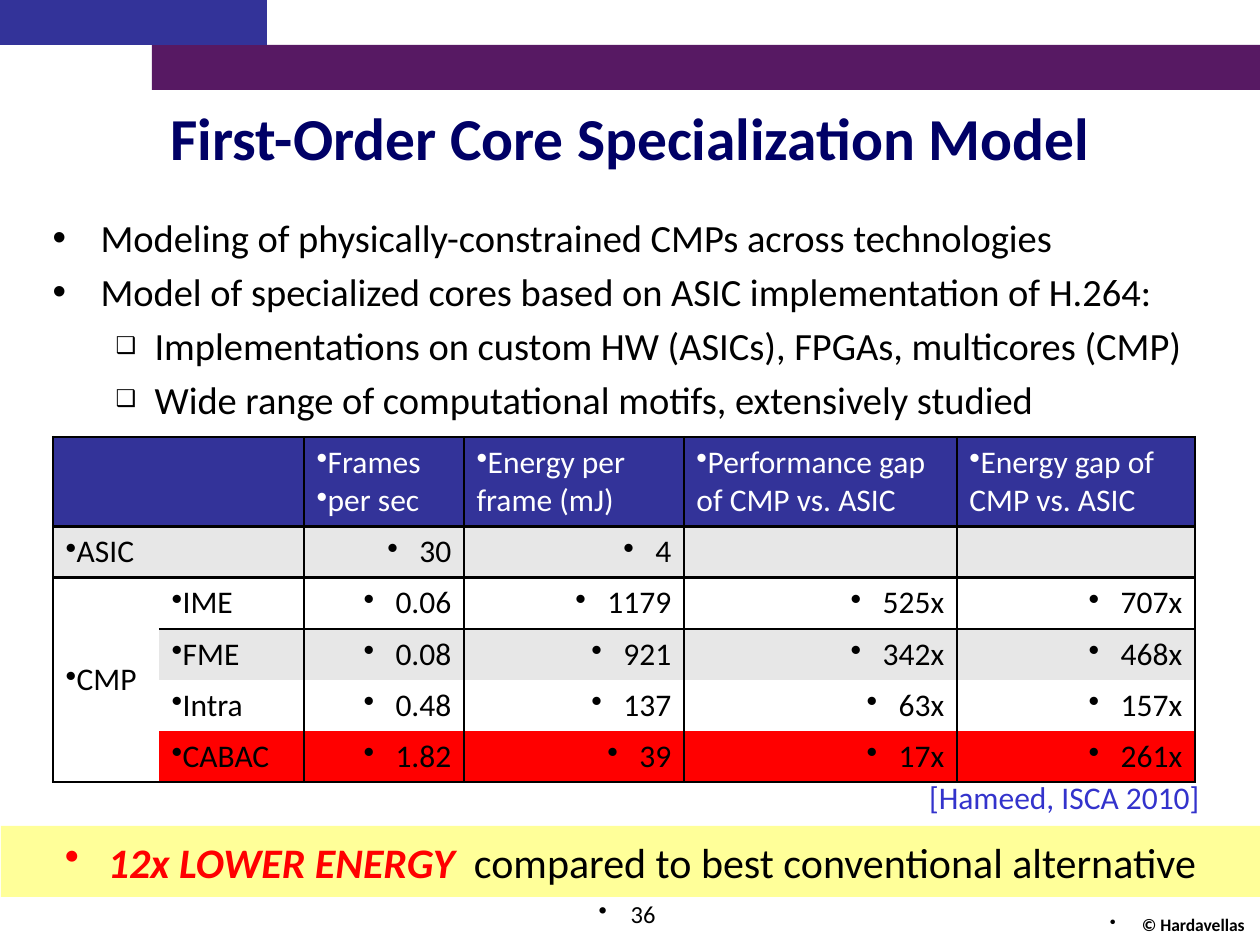
from pptx import Presentation
from pptx import util as u
from pptx.dml.color import RGBColor
from pptx.enum import shapes, text
from pptx.oxml.ns import qn
from lxml import etree

PX = 914400 / 126
FONT = "Calibri"
COLORS = {
    "blue": "333399", "purple": "571963", "navy": "000066", "link": "3333CC",
    "yellow": "FFFF99", "red": "FF0000", "gray": "E7E7E7", "white": "FFFFFF",
    "black": "000000",
}
ALIGN = {"l": text.PP_ALIGN.LEFT, "c": text.PP_ALIGN.CENTER, "r": text.PP_ALIGN.RIGHT}

BULLETS = [
    ("Modeling of physically-constrained CMPs across technologies", 0),
    ("Model of specialized cores based on ASIC implementation of H.264:", 0),
    ("Implementations on custom HW (ASICs), FPGAs, multicores (CMP)", 1),
    ("Wide range of computational motifs, extensively studied", 1),
]
COLS = [106, 145, 160, 220, 273, 238]
ROWS = [89, 51, 51, 51, 51, 51]
CELLS = [
    ["", "", "Frames\nper sec", "Energy per frame (mJ)",
     "Performance gap of CMP vs. ASIC", "Energy gap of CMP vs. ASIC"],
    ["ASIC", "", "30", "4", "", ""],
    ["CMP", "IME", "0.06", "1179", "525x", "707x"],
    ["", "FME", "0.08", "921", "342x", "468x"],
    ["", "Intra", "0.48", "137", "63x", "157x"],
    ["", "CABAC", "1.82", "39", "17x", "261x"],
]
ROW_FILLS = ["blue", "gray", "white", "gray", "white", "red"]


def px(n):
    """Turn px into EMU."""
    return u.Emu(round(n * PX))


def rgb(name):
    """Look up a colour by name."""
    return RGBColor.from_string(COLORS[name])


def place(sp, box):
    """Move a shape to a px box."""
    sp.left, sp.top, sp.width, sp.height = map(px, box)


def write(tf, *runs, size=18, color="black", bold=False, italic=False, align="l",
          level=0, before=0, bullet=None, bullet_size=100, hang=0, margin=None):
    """Add a paragraph of strings or (string, overrides) runs to a text frame."""
    first = not tf.text
    p = tf.paragraphs[0] if first else tf.add_paragraph()
    p.level = level
    p.alignment = ALIGN[align]
    p.space_before = u.Pt(0 if first else before)
    pPr = p._p.get_or_add_pPr()
    pPr.set("marL", str(px(hang if margin is None else margin)))
    pPr.set("indent", str(px(-hang)))
    if bullet:
        etree.SubElement(pPr, qn("a:buSzPct"), val=str(bullet_size * 1000))
        etree.SubElement(pPr, qn("a:buChar"), char=bullet)
    else:
        etree.SubElement(pPr, qn("a:buNone"))
    for run in runs:
        words, own = run if isinstance(run, tuple) else (run, {})
        r = p.add_run()
        r.text = words
        r.font.name = FONT
        r.font.size = u.Pt(size)
        r.font.bold = own.get("bold", bold)
        r.font.italic = own.get("italic", italic)
        r.font.color.rgb = rgb(own.get("color", color))


def add_rect(s, box, fill):
    """Draw a plain filled rectangle."""
    sp = s.shapes.add_shape(shapes.MSO_SHAPE.RECTANGLE, *map(px, box))
    sp.shadow.inherit = False
    sp.fill.solid()
    sp.fill.fore_color.rgb = rgb(fill)
    sp.line.fill.background()
    return sp


def add_label(s, box, words, wrap=True, **fmt):
    """Place one right-aligned line of text."""
    tf = s.shapes.add_textbox(*map(px, box)).text_frame
    tf.word_wrap = wrap
    write(tf, words, align="r", **fmt)


def add_header(s, box):
    """Draw the two staggered bars at the top."""
    x, y, w, h = box
    half = h // 2
    add_rect(s, (x + 152, y + half, w - 152, half), "purple")
    add_rect(s, (x, y, 267, half), "blue")


def add_title(s, box):
    """Fill the title placeholder."""
    place(s.shapes.title, box)
    tf = s.shapes.title.text_frame
    tf.vertical_anchor = text.MSO_ANCHOR.MIDDLE
    write(tf, "First-Order Core Specialization Model", size=34, color="navy",
          bold=True, align="c")


def add_body(s, box):
    """Fill the body placeholder with the two-level list."""
    sp = s.placeholders[1]
    place(sp, box)
    tf = sp.text_frame
    tf.auto_size = text.MSO_AUTO_SIZE.NONE
    levels = [dict(bullet="•", hang=48),
              dict(bullet="❑", bullet_size=60, hang=39, margin=102)]
    for words, level in BULLETS:
        write(tf, words, size=22, level=level, before=4.4, **levels[level])


def set_borders(cell, row, col):
    """Rule the sides of a cell, leaving grouped cells open."""
    def ruled(line):
        return line in (0, 1, 2, len(ROWS)) or (line == 3 and col > 0)

    sides = {"lnL": col != 1, "lnR": col != 0, "lnT": ruled(row),
             "lnB": ruled(row + cell.span_height)}
    tcPr = cell._tc.get_or_add_tcPr()
    for i, (tag, shown) in enumerate(sides.items()):
        ln = etree.Element(qn("a:" + tag), w=str(u.Pt(1.5)))
        if shown:
            fill = etree.SubElement(ln, qn("a:solidFill"))
            etree.SubElement(fill, qn("a:srgbClr"), val=COLORS["black"])
        else:
            etree.SubElement(ln, qn("a:noFill"))
        tcPr.insert(i, ln)


def add_comparison(s, x, y):
    """Build the ASIC and CMP comparison table."""
    tb = s.shapes.add_table(len(ROWS), len(COLS), px(x), px(y),
                            px(sum(COLS)), px(sum(ROWS))).table
    tb.first_row = tb.horz_banding = False
    for col, w in zip(tb.columns, COLS):
        col.width = px(w)
    for row, h in zip(tb.rows, ROWS):
        row.height = px(h)
    tb.cell(2, 0).merge(tb.cell(5, 0))
    tb.cell(2, 0).vertical_anchor = text.MSO_ANCHOR.MIDDLE
    for i, row in enumerate(CELLS):
        for j, words in enumerate(row):
            cell = tb.cell(i, j)
            cell.fill.solid()
            cell.fill.fore_color.rgb = rgb("white" if i > 1 and j == 0 else ROW_FILLS[i])
            set_borders(cell, i, j)
            number = i > 0 and j > 1
            for line in words.split("\n") if words else []:
                write(cell.text_frame, line, color="black" if i else "white", bullet="•",
                      align="r" if number else "l", hang=32 if number else 0)


def add_takeaway(s, box):
    """Draw the yellow band with the conclusion."""
    tf = add_rect(s, box, "yellow").text_frame
    tf.word_wrap = True
    tf.vertical_anchor = text.MSO_ANCHOR.MIDDLE
    write(tf, ("12x LOWER ENERGY ", dict(color="red", bold=True, italic=True)),
          " compared to best conventional alternative",
          size=24, align="c", bullet="•", hang=43)


def main():
    """Build and save the slide."""
    prs = Presentation()
    prs.slide_width, prs.slide_height = u.Inches(10), u.Inches(7.5)
    s = prs.slides.add_slide(prs.slide_layouts[1])
    add_header(s, (0, 0, 1260, 91))
    add_title(s, (0, 91, 1260, 91))
    add_body(s, (40, 208, 1159, 606))
    add_comparison(s, 53, 437)
    add_label(s, (906, 772, 306, 50), "[Hameed, ISCA 2010]", wrap=False, color="link")
    add_takeaway(s, (1, 826, 1259, 71))
    add_label(s, (840, 908, 417, 32), "© Hardavellas", size=10, bold=True,
              bullet="•", hang=32)
    add_label(s, (374, 893, 294, 50), "36", size=14, bullet="•", hang=32)
    prs.save("out.pptx")


if __name__ == "__main__":
    main()
